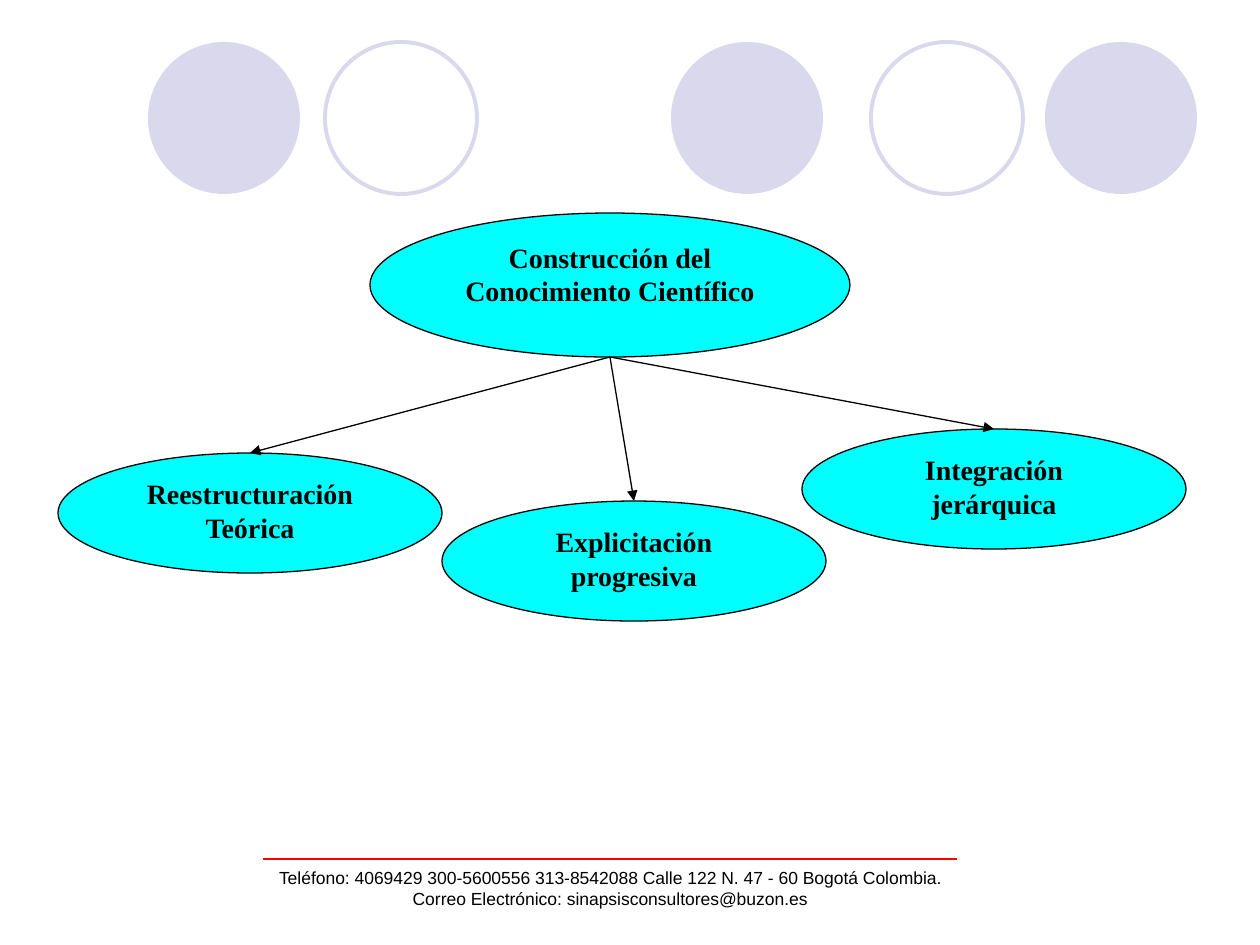
from dataclasses import dataclass

from lxml.etree import SubElement
from pptx import Presentation
from pptx.dml.color import RGBColor
from pptx.enum.shapes import MSO_CONNECTOR, MSO_SHAPE
from pptx.enum.text import MSO_ANCHOR, PP_ALIGN
from pptx.oxml.ns import qn
from pptx.util import Emu, Pt

SCALE = 914400 / 126  # EMU in one px
SLIDE = (1260, 945)


@dataclass(frozen=True)
class Theme:
    lilac: RGBColor = RGBColor(0xD9, 0xD8, 0xEC)
    cyan: RGBColor = RGBColor(0x00, 0xFF, 0xFF)
    black: RGBColor = RGBColor(0x00, 0x00, 0x00)
    red: RGBColor = RGBColor(0xFF, 0x00, 0x00)
    thin: float = 0.75
    ring: float = 2.25


T = Theme()
NODE_FONT = {"name": "Times New Roman", "size": Pt(16), "bold": True}
FOOTER_FONT = {"name": "Arial", "size": Pt(10), "bold": False}

# Decorative circles: left edge, filled or ring
CIRCLE_TOP, CIRCLE_SIZE = 42, 152
CIRCLES = [(671, True), (1045, True), (148, True), (871, False), (325, False)]

ROOT = ("Construcción del Conocimiento Científico", (370, 213, 480, 144))
CHILD_SIZE = (384, 120)
CHILDREN = [
    ("Reestructuración Teórica", (58, 453)),
    ("Explicitación progresiva", (442, 501)),
    ("Integración jerárquica", (802, 429)),
]

RULE = (263, 859, 957, 859)
FOOTER_BOX = (193, 861, 834, 63)
FOOTER = [
    "Teléfono: 4069429 300-5600556 313-8542088 Calle 122 N. 47 - 60 Bogotá Colombia.",
    "Correo Electrónico: sinapsisconsultores@buzon.es",
]


def px(*lengths):
    return [Emu(round(n * SCALE)) for n in lengths]


def write(tf, lines, font):
    tf.word_wrap = True
    tf.vertical_anchor = MSO_ANCHOR.TOP
    for i, line in enumerate(lines):
        p = tf.add_paragraph() if i else tf.paragraphs[0]
        p.alignment = PP_ALIGN.CENTER
        r = p.add_run()
        r.text = line
        for key, value in font.items():
            setattr(r.font, key, value)
        r.font.color.rgb = T.black


def add_ellipse(s, box, fill=None, line=None, width=T.thin):
    sp = s.shapes.add_shape(MSO_SHAPE.OVAL, *px(*box))
    sp.shadow.inherit = False
    if fill is None:
        sp.fill.background()
    else:
        sp.fill.solid()
        sp.fill.fore_color.rgb = fill
    if line is None:
        sp.line.fill.background()
    else:
        sp.line.color.rgb = line
        sp.line.width = Pt(width)
    return sp


def add_node(s, text, box):
    sp = add_ellipse(s, box, T.cyan, T.black)
    write(sp.text_frame, [text], NODE_FONT)
    return sp


def add_line(s, ends, color, arrow=False):
    c = s.shapes.add_connector(MSO_CONNECTOR.STRAIGHT, *px(*ends))
    c.line.color.rgb = color
    c.line.width = Pt(T.thin)
    if arrow:
        SubElement(c.line._get_or_add_ln(), qn("a:tailEnd"), type="triangle")
    SubElement(c._element.spPr, qn("a:effectLst"))
    return c


def main():
    prs = Presentation()
    prs.slide_width, prs.slide_height = px(*SLIDE)
    s = prs.slides.add_slide(prs.slide_layouts[6])

    for left, filled in CIRCLES:
        style = {"fill": T.lilac} if filled else {"line": T.lilac, "width": T.ring}
        add_ellipse(s, (left, CIRCLE_TOP, CIRCLE_SIZE, CIRCLE_SIZE), **style)

    add_line(s, RULE, T.red)
    footer = s.shapes.add_textbox(*px(*FOOTER_BOX))
    write(footer.text_frame, FOOTER, FOOTER_FONT)

    add_node(s, *ROOT)
    nodes = [add_node(s, text, at + CHILD_SIZE) for text, at in CHILDREN]

    left, top, width, height = ROOT[1]
    start = (left + width / 2, top + height)
    for node, (_, (x, y)) in zip(nodes, CHILDREN):
        end = (x + CHILD_SIZE[0] / 2, y)
        add_line(s, start + end, T.black, arrow=True).end_connect(node, 0)

    prs.save("out.pptx")


if __name__ == "__main__":
    main()
